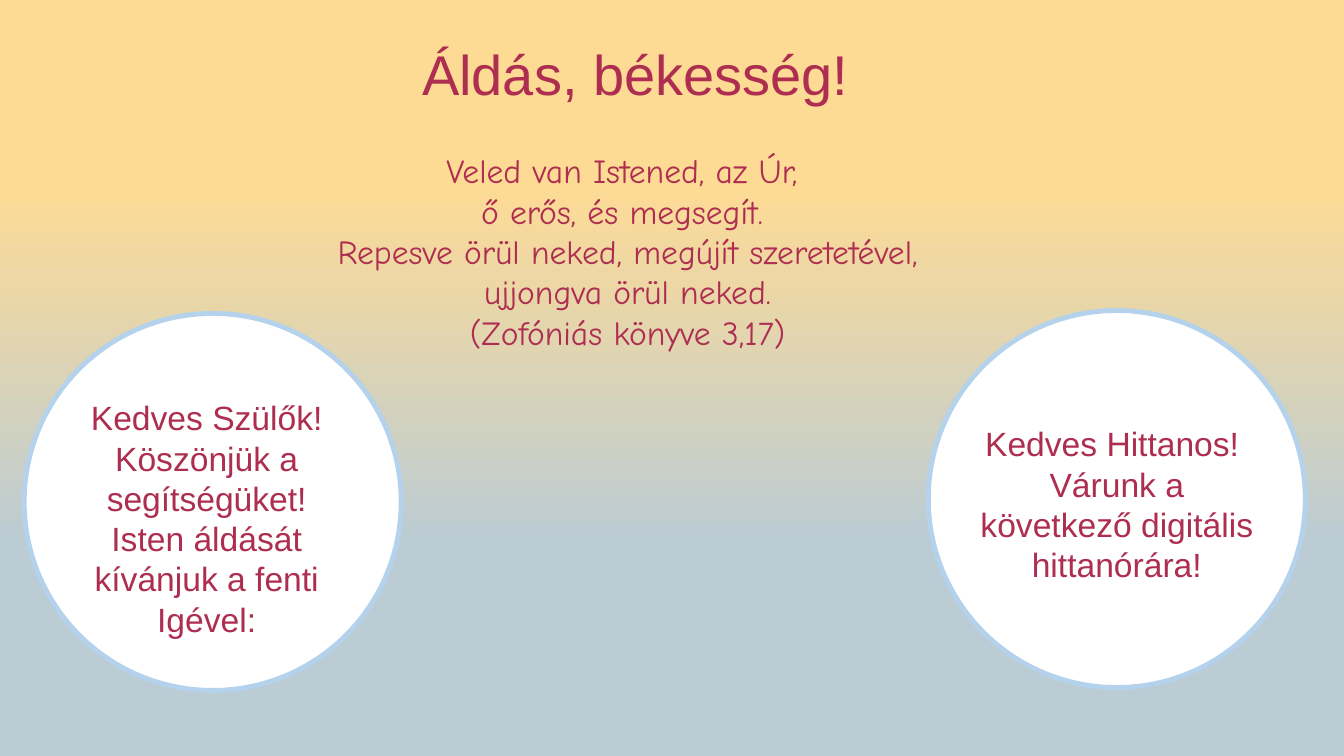
from pptx import Presentation
from pptx.dml.color import RGBColor
from pptx.enum.shapes import MSO_SHAPE as Preset
from pptx.enum.text import MSO_AUTO_SIZE as AutoSize, PP_ALIGN as Align
from pptx.util import Pt

BERRY = "AE2E51"
WHITE = "FFFFFF"
PALE_BLUE = "B5D2EC"
BACKGROUND_STOPS = [(0.28, "BBCCD4"), (0.76, "FEDB94")]
CIRCLE_SIZE = 269.3

GREETING = [" Áldás, békesség!"]
VERSE = [
    "Veled van Istened, az Úr, ",
    "ő erős, és megsegít. ",
    "Repesve örül neked, megújít szeretetével, ujjongva örül neked.",
    "(Zofóniás könyve 3,17)",
]
PUPIL_MESSAGE = ["Kedves Hittanos! ", "Várunk a következő digitális hittanórára!"]
PARENT_MESSAGE = [
    "Kedves Szülők!",
    "Köszönjük a segítségüket!",
    "Isten áldását kívánjuk a fenti Igével:",
]


def color(hex_string):
    return RGBColor.from_string(hex_string)


def paint_background(slide):
    fill = slide.background.fill
    fill.gradient()
    fill.gradient_angle = 90
    for stop, (position, hex_string) in zip(fill.gradient_stops, BACKGROUND_STOPS):
        stop.position = position
        stop.color.rgb = color(hex_string)


def add_circle(slide, left, top):
    shape = slide.shapes.add_shape(
        Preset.OVAL, Pt(left), Pt(top), Pt(CIRCLE_SIZE), Pt(CIRCLE_SIZE))
    shape.shadow.inherit = False
    shape.fill.solid()
    shape.fill.fore_color.rgb = color(WHITE)
    shape.line.color.rgb = color(PALE_BLUE)
    shape.line.width = Pt(3.5)


def add_text(slide, left, top, width, height, lines, size=24, font_name="Arial"):
    shape = slide.shapes.add_textbox(Pt(left), Pt(top), Pt(width), Pt(height))
    text_frame = shape.text_frame
    text_frame.word_wrap = True
    text_frame.auto_size = AutoSize.SHAPE_TO_FIT_TEXT
    text_frame.text = "\n".join(lines)
    for paragraph in text_frame.paragraphs:
        paragraph.alignment = Align.CENTER
        for run in paragraph.runs:
            run.font.name = font_name
            run.font.size = Pt(size)
            run.font.color.rgb = color(BERRY)


def main():
    presentation = Presentation()
    presentation.slide_width = Pt(960)
    presentation.slide_height = Pt(540)
    slide = presentation.slides.add_slide(presentation.slide_layouts[6])
    paint_background(slide)

    # Greeting and Bible verse
    add_text(slide, 208.1, 24.5, 480.2, 55.4, GREETING, size=40)
    add_text(slide, 189.4, 103.7, 517.7, 152.6, VERSE, font_name="Comic Neue")

    # Message to the parents
    add_circle(slide, 17.3, 223.9)
    add_text(slide, 25.9, 280.1, 243.4, 181.4, PARENT_MESSAGE)

    # Message to the pupils
    add_circle(slide, 663.1, 221.8)
    add_text(slide, 687.6, 298.8, 220.3, 123.8, PUPIL_MESSAGE)

    presentation.save("out.pptx")


if __name__ == "__main__":
    main()
